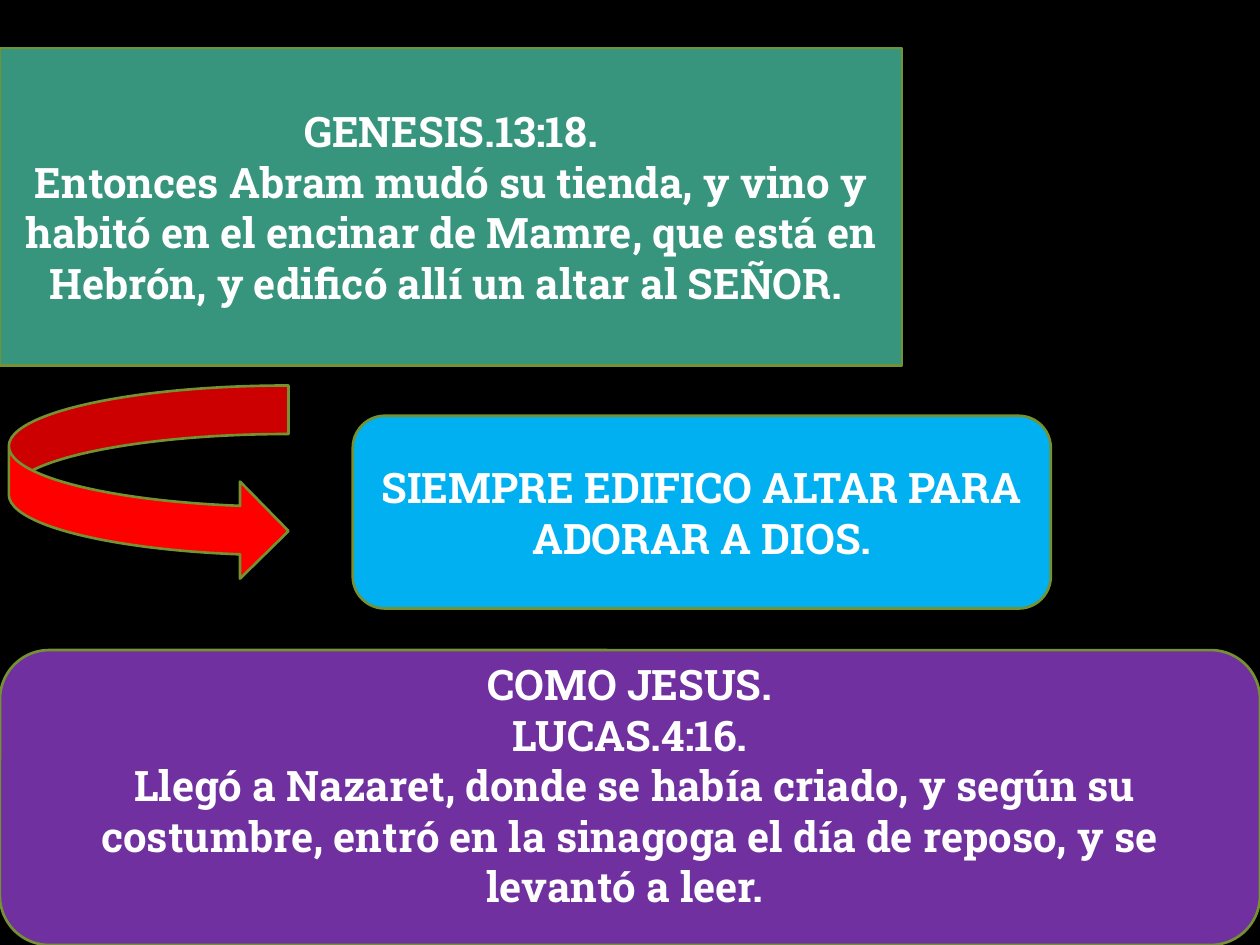
from pptx import Presentation
from pptx import util as u
from pptx.dml import color
from pptx.enum import shapes, text

COLORS = {
    "background": "000000",
    "genesis": "37947D",
    "arrow": "FF0000",
    "altar": "00B0F0",
    "jesus": "7030A0",
    "outline": "759232",
    "text": "FFFFFF",
}
FONT = {"name": "Roboto Slab", "size": u.Pt(24), "bold": True}
SHAPE = shapes.MSO_SHAPE


def rgb(name):
    return color.RGBColor.from_string(COLORS[name])


def set_all(obj, values):
    for key, value in values.items():
        setattr(obj, key, value)


def add_shape(s, kind, box, fill):
    sp = s.shapes.add_shape(kind, *map(u.Inches, box))
    sp.shadow.inherit = False
    sp.fill.solid()
    sp.fill.fore_color.rgb = rgb(fill)
    sp.line.color.rgb = rgb("outline")
    sp.line.width = u.Pt(1.5)
    return sp


def add_panel(s, kind, box, fill, lines, frame=None):
    tf = add_shape(s, kind, box, fill).text_frame
    set_all(tf, {"word_wrap": True, "vertical_anchor": text.MSO_ANCHOR.MIDDLE})
    set_all(tf, frame or {})
    for i, line in enumerate(lines):
        p = tf.paragraphs[0] if i == 0 else tf.add_paragraph()
        p.alignment = text.PP_ALIGN.CENTER
        r = p.add_run()
        r.text = line
        set_all(r.font, FONT)
        r.font.color.rgb = rgb("text")


def add_genesis(s, box):
    add_panel(s, SHAPE.FLOWCHART_PROCESS, box, "genesis", [
        "GENESIS.13:18.",
        "Entonces Abram mudó su tienda, y vino y habitó en el encinar de Mamre, "
        "que está en Hebrón, y edificó allí un altar al SEÑOR. ",
    ])


def add_altar(s, box):
    add_panel(s, SHAPE.ROUNDED_RECTANGLE, box, "altar",
              ["SIEMPRE EDIFICO ALTAR PARA ADORAR A DIOS."])


def add_jesus(s, box):
    add_panel(s, SHAPE.ROUNDED_RECTANGLE, box, "jesus", [
        "COMO JESUS.",
        "LUCAS.4:16.",
        " Llegó a Nazaret, donde se había criado, y según su costumbre, "
        "entró en la sinagoga el día de reposo, y se levantó a leer. ",
    ], {"margin_top": 0, "margin_bottom": u.Inches(0.2)})


def main():
    prs = Presentation()
    set_all(prs, {"slide_width": u.Inches(10), "slide_height": u.Inches(7.5)})
    s = prs.slides.add_slide(prs.slide_layouts[6])
    s.background.fill.solid()
    s.background.fill.fore_color.rgb = rgb("background")
    add_genesis(s, (0, 0.38, 7.16, 2.52))
    add_shape(s, SHAPE.CURVED_RIGHT_ARROW, (0.07, 3.06, 2.22, 1.54), "arrow")
    add_altar(s, (2.8, 3.3, 5.54, 1.53))
    add_jesus(s, (0, 5.16, 10, 2.34))
    prs.save("out.pptx")


if __name__ == "__main__":
    main()
